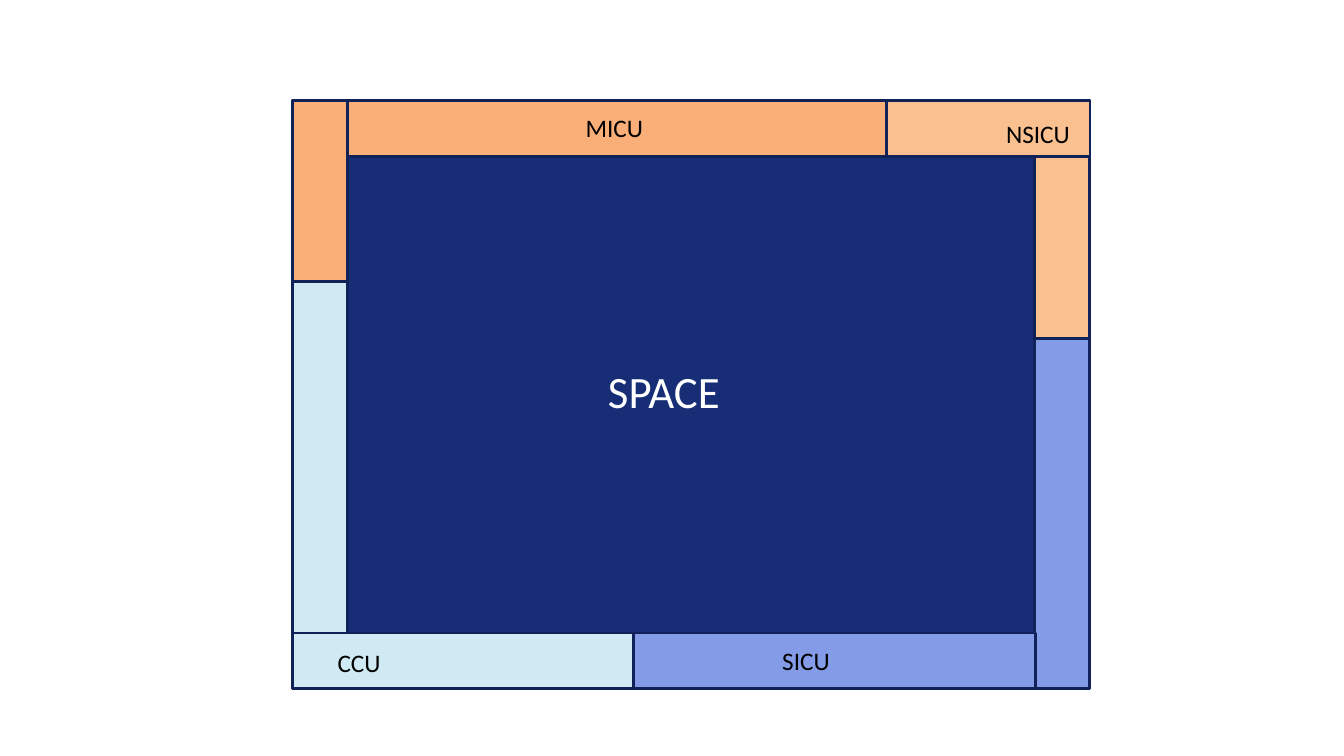
from pptx import Presentation
from pptx.dml.color import RGBColor
from pptx.enum.shapes import MSO_SHAPE
from pptx.enum.text import MSO_AUTO_SIZE, PP_ALIGN
from pptx.util import Inches, Pt

NAVY = RGBColor(0x17, 0x2E, 0x77)
OUTLINE = RGBColor(0x11, 0x22, 0x58)
ORANGE = RGBColor(0xFA, 0xAF, 0x79)
PEACH = RGBColor(0xFA, 0xC0, 0x90)
PERIWINKLE = RGBColor(0x84, 0x9B, 0xE7)
PALE_BLUE = RGBColor(0xCF, 0xEA, 0xF3)
BLACK = RGBColor(0, 0, 0)
WHITE = RGBColor(0xFF, 0xFF, 0xFF)

# Floor outline and depth of the unit strips, in inches
LEFT, TOP, WIDTH, HEIGHT = 2.9, 1, 7.91, 5.83
STRIP = 0.55
RIGHT_STRIP = LEFT + WIDTH - STRIP
BOTTOM_STRIP = TOP + HEIGHT - STRIP


class FloorPlan:
    font_name = "Calibri"
    line_width = Pt(2)

    def __init__(self, slide):
        self.slide = slide

    def room(self, left, top, width, height, color):
        shape = self.slide.shapes.add_shape(
            MSO_SHAPE.RECTANGLE, Inches(left), Inches(top), Inches(width), Inches(height))
        shape.shadow.inherit = False
        shape.fill.solid()
        shape.fill.fore_color.rgb = color
        shape.line.color.rgb = OUTLINE
        shape.line.width = self.line_width

    def label(self, text, left, top, width, height=0.4, size=18, color=BLACK,
              alignment=PP_ALIGN.LEFT):
        box = self.slide.shapes.add_textbox(
            Inches(left), Inches(top), Inches(width), Inches(height))
        frame = box.text_frame
        frame.word_wrap = True
        frame.auto_size = MSO_AUTO_SIZE.SHAPE_TO_FIT_TEXT
        paragraph = frame.paragraphs[0]
        paragraph.text = text
        paragraph.alignment = alignment
        paragraph.font.name = self.font_name
        paragraph.font.size = Pt(size)
        paragraph.font.color.rgb = color


def main():
    presentation = Presentation()
    presentation.slide_width = Inches(13.33)
    presentation.slide_height = Inches(7.5)
    plan = FloorPlan(presentation.slides.add_slide(presentation.slide_layouts[6]))

    plan.room(LEFT, TOP, WIDTH, HEIGHT, NAVY)
    for left, top, width, height, color in (
        (LEFT, TOP, STRIP, 1.82, ORANGE),
        (LEFT + STRIP, TOP, 5.34, STRIP, ORANGE),
        (RIGHT_STRIP, TOP + STRIP, STRIP, 1.82, PEACH),
        (8.79, TOP, 2.02, STRIP, PEACH),
        (RIGHT_STRIP, 3.36, STRIP, 3.47, PERIWINKLE),
        (5.16, BOTTOM_STRIP, 5.11, STRIP, PERIWINKLE),
        (LEFT, BOTTOM_STRIP, 3.38, STRIP, PALE_BLUE),
        (LEFT, 2.79, STRIP, 3.49, PALE_BLUE),
    ):
        plan.room(left, top, width, height, color)

    plan.label("MICU", 5.71, 1.07, 3.34)
    plan.label("NSICU", 9.88, 1.12, 3.34)
    plan.label("SICU", 7.66, 6.35, 2.91)
    plan.label("CCU", 3.25, 6.37, 3.34)
    plan.label("SPACE", 3.57, 3.56, 6.03, 0.64, 32, WHITE, PP_ALIGN.CENTER)

    presentation.save("out.pptx")


if __name__ == "__main__":
    main()
